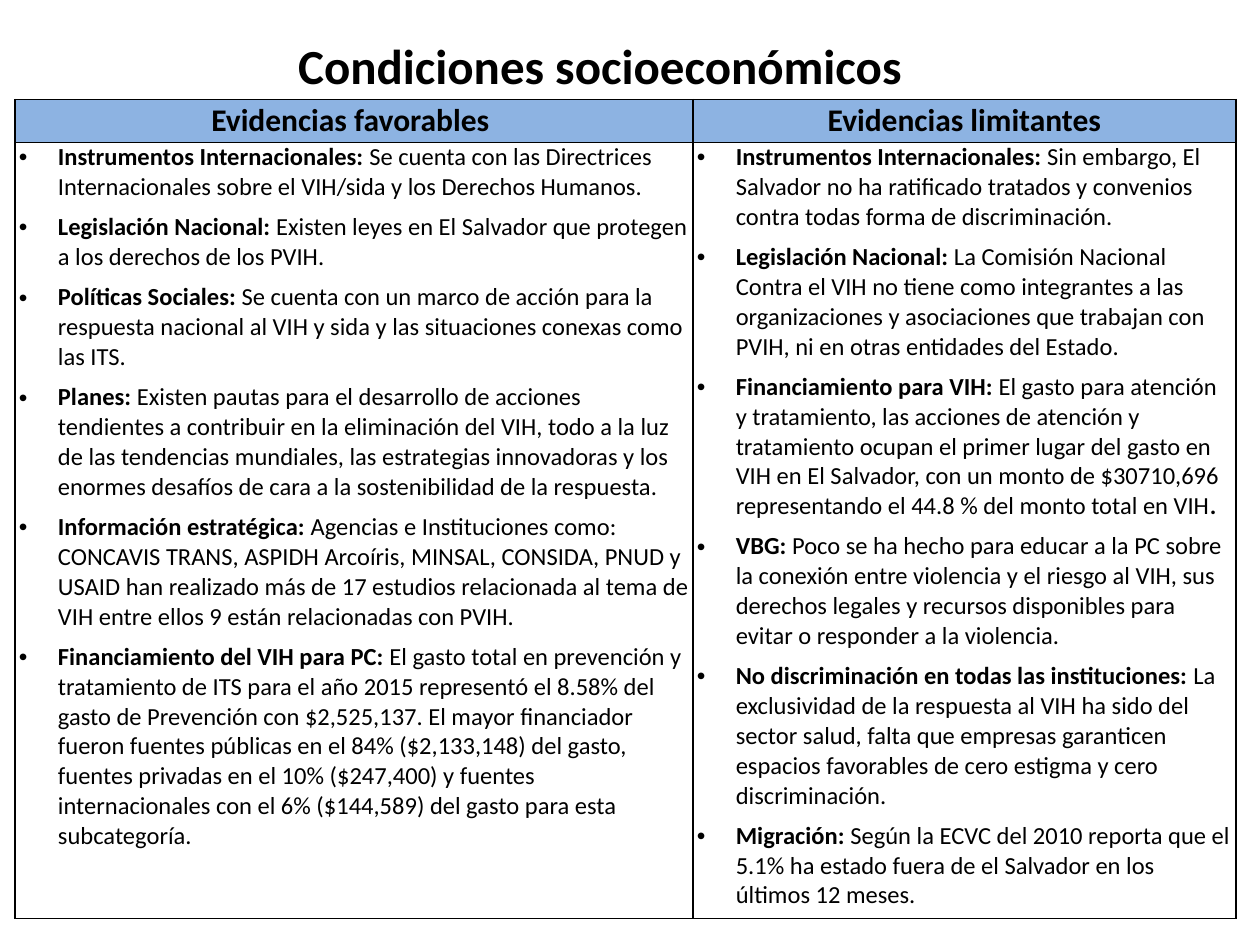
from dataclasses import dataclass

from lxml import etree
from pptx import Presentation
from pptx.dml.color import RGBColor
from pptx.enum.text import MSO_ANCHOR, PP_ALIGN
from pptx.oxml.ns import qn
from pptx.util import Inches, Pt

CENTER = PP_ALIGN.CENTER
MIDDLE, TOP = MSO_ANCHOR.MIDDLE, MSO_ANCHOR.TOP


@dataclass(frozen=True)
class Theme:
    font: str = "Calibri"
    ink: str = "000000"
    header: str = "8DB3E2"
    paper: str = "FFFFFF"
    title_size: int = 28
    header_size: int = 18
    body_size: int = 14


THEME = Theme()
LEFT = 0.12
TABLE_TOP = 0.79
COLUMN_WIDTHS = (5.38, 4.31)
ROW_HEIGHTS = (0.34, 6.16)
CELL_INSET = 0.03
INDENT = 0.31
BORDER = 1

TITLE = "Condiciones socioeconómicos "
# Each column: heading, then items made of a bold label, plain text and an optional bold ending.
COLUMNS = (
    ("Evidencias favorables ", (
        ("Instrumentos Internacionales: ",
         "Se cuenta con las Directrices Internacionales sobre el VIH/sida y los "
         "Derechos Humanos."),
        ("Legislación Nacional: ",
         "Existen leyes en El Salvador que protegen a los derechos de los PVIH."),
        ("Políticas Sociales: ",
         "Se cuenta con un marco de acción para la respuesta nacional al VIH y sida "
         "y las situaciones conexas como las ITS."),
        ("Planes:",
         " Existen pautas para el desarrollo de acciones tendientes a contribuir en "
         "la eliminación del VIH, todo a la luz de las tendencias mundiales, las "
         "estrategias innovadoras y los enormes desafíos de cara a la sostenibilidad "
         "de la respuesta."),
        ("Información estratégica: ",
         "Agencias e Instituciones como: CONCAVIS TRANS, ASPIDH Arcoíris, MINSAL, "
         "CONSIDA, PNUD y USAID han realizado más de 17 estudios relacionada al tema "
         "de VIH entre ellos 9 están relacionadas con PVIH."),
        ("Financiamiento del VIH para PC: ",
         "El gasto total en prevención y tratamiento de ITS para el año 2015 "
         "representó el 8.58% del gasto de Prevención con $2,525,137. El mayor "
         "financiador fueron fuentes públicas en el 84% ($2,133,148) del gasto, "
         "fuentes privadas en el 10% ($247,400) y fuentes internacionales con el 6% "
         "($144,589) del gasto para esta subcategoría."),
    )),
    ("Evidencias limitantes", (
        ("Instrumentos Internacionales: ",
         "Sin embargo, El Salvador no ha ratificado tratados y convenios contra todas "
         "forma de discriminación."),
        ("Legislación Nacional: ",
         "La Comisión Nacional Contra el VIH no tiene como integrantes a las "
         "organizaciones y asociaciones que trabajan con PVIH, ni en otras entidades "
         "del Estado."),
        ("Financiamiento para VIH: ",
         "El gasto para atención y tratamiento, las acciones de atención y "
         "tratamiento ocupan el primer lugar del gasto en VIH en El Salvador, con un "
         "monto de $30710,696 representando el 44.8 % del monto total en VIH",
         "."),
        ("VBG: ",
         "Poco se ha hecho para educar a la PC sobre la conexión entre violencia y el "
         "riesgo al VIH, sus derechos legales y recursos disponibles para evitar o "
         "responder a la violencia."),
        ("No discriminación en todas las instituciones: ",
         "La exclusividad de la respuesta al VIH ha sido del sector salud, falta que "
         "empresas garanticen espacios favorables de cero estigma y cero "
         "discriminación."),
        ("Migración: ",
         "Según la ECVC del 2010 reporta que el 5.1% ha estado fuera de el Salvador "
         "en los últimos 12 meses."),
    )),
)


def style_font(font, size):
    font.name = THEME.font
    font.size = Pt(size)
    font.color.rgb = RGBColor.from_string(THEME.ink)


def write_heading(para, text, size):
    para.alignment = CENTER
    style_font(para.font, size)
    para.font.bold = True
    para.add_run().text = text


def write_bullet(para, spans):
    """Write a bulleted paragraph whose spans alternate bold and plain."""
    properties = para._p.get_or_add_pPr()
    properties.set("marL", str(Inches(INDENT)))
    properties.set("indent", str(-Inches(INDENT)))
    etree.SubElement(properties, qn("a:buFont"), typeface="Arial")
    etree.SubElement(properties, qn("a:buChar"), char="•")
    para.space_before = Pt(6)
    style_font(para.font, THEME.body_size)
    for index, text in enumerate(spans):
        span = para.add_run()
        span.text = text
        span.font.bold = index % 2 == 0


def format_cell(cell, fill, anchor):
    properties = cell._tc.get_or_add_tcPr()
    for side in ("lnL", "lnR", "lnT", "lnB"):
        line = etree.SubElement(properties, qn(f"a:{side}"), w=str(Pt(BORDER)))
        solid = etree.SubElement(line, qn("a:solidFill"))
        etree.SubElement(solid, qn("a:srgbClr"), val=THEME.ink)
    cell.fill.solid()
    cell.fill.fore_color.rgb = RGBColor.from_string(fill)
    cell.vertical_anchor = anchor
    cell.margin_left = cell.margin_right = Inches(CELL_INSET)
    cell.margin_top = cell.margin_bottom = 0


def add_evidence_table(page):
    table = page.shapes.add_table(
        len(ROW_HEIGHTS), len(COLUMNS), Inches(LEFT), Inches(TABLE_TOP),
        Inches(sum(COLUMN_WIDTHS)), Inches(sum(ROW_HEIGHTS))).table
    table.first_row = table.horz_banding = False
    for row, height in zip(table.rows, ROW_HEIGHTS):
        row.height = Inches(height)
    for number, (heading, items) in enumerate(COLUMNS):
        table.columns[number].width = Inches(COLUMN_WIDTHS[number])
        header, body = table.cell(0, number), table.cell(1, number)
        format_cell(header, THEME.header, MIDDLE)
        write_heading(header.text_frame.paragraphs[0], heading, THEME.header_size)
        format_cell(body, THEME.paper, TOP)
        frame = body.text_frame
        for index, spans in enumerate(items):
            para = frame.add_paragraph() if index else frame.paragraphs[0]
            write_bullet(para, spans)


def add_title(page):
    box = page.shapes.add_textbox(Inches(LEFT), Inches(0.23), Inches(9.37), Inches(0.57))
    box.text_frame.word_wrap = True
    write_heading(box.text_frame.paragraphs[0], TITLE, THEME.title_size)


def main():
    deck = Presentation()
    deck.slide_width, deck.slide_height = Inches(10), Inches(7.5)
    page = deck.slides.add_slide(deck.slide_layouts[6])
    add_evidence_table(page)
    add_title(page)
    deck.save("out.pptx")


if __name__ == "__main__":
    main()
